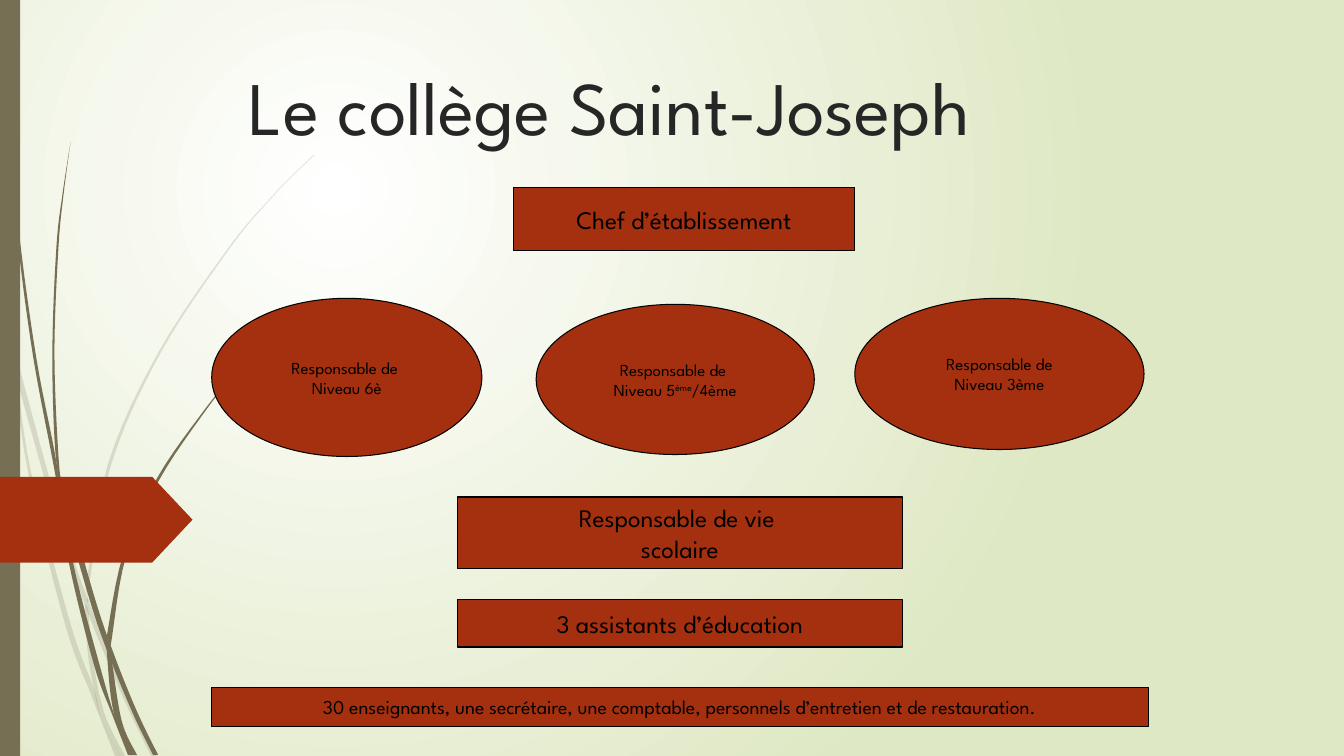
from lxml.etree import SubElement
from pptx import Presentation
from pptx.dml.color import RGBColor
from pptx.enum.shapes import MSO_SHAPE
from pptx.enum.text import MSO_ANCHOR, MSO_AUTO_SIZE, PP_ALIGN
from pptx.oxml.ns import qn
from pptx.util import Pt

FONT = "League Spartan"
WHITE = RGBColor(0xFF, 0xFF, 0xFF)
PALE_GREEN = RGBColor(0xDF, 0xE8, 0xC4)
OLIVE = RGBColor(0x76, 0x6F, 0x54)
RUST = RGBColor(0xA5, 0x30, 0x10)
CHARCOAL = RGBColor(0x26, 0x26, 0x26)
BLACK = RGBColor(0, 0, 0)

TITLE = "Le collège Saint-Joseph"
TITLE_BOX = (170.6, 24.5, 702, 86.4)
BAND_BOX = (0, 0, 14.4, 540)
ARROW_BOX = (0, 340.6, 137.5, 61.2)

RECT, OVAL = MSO_SHAPE.RECTANGLE, MSO_SHAPE.OVAL
ROLES = [
    (RECT, (366.5, 133.9, 244.1, 45.4), 18, ["Chef d’établissement"]),
    (RECT, (326.9, 355, 317.5, 51.1), 18, ["Responsable de vie ", "scolaire"]),
    (RECT, (326.9, 428.4, 317.5, 33.8), 18, ["3 assistants d’éducation"]),
    (OVAL, (151.2, 213.1, 193, 113), 12, ["Responsable de ", "Niveau 6è"]),
    (OVAL, (383, 217.4, 198.7, 107.3), 12, ["Responsable de ", "Niveau 5^ème^/4ème"]),
    (OVAL, (610.6, 213.1, 206.6, 108), 12, ["Responsable de", "Niveau 3ème"]),
    (RECT, (151.2, 491, 668.9, 28.1), 14,
     ["30 enseignants, une secrétaire, une comptable, personnels d’entretien et de restauration."]),
]

PALE_STEMS = [
    ([(0, 215.3), (7.2, 247.7), (20.2, 338.4), (46.8, 447.1), (66.2, 499), (82.1, 540)],
     [(0, 203), (6.5, 231.8), (12.2, 270.7), (22.3, 337.7), (50.4, 445.7), (67, 491.8),
      (72.7, 514.1), (85.7, 540)]),
    ([(10.1, 248.4), (12.2, 270.7), (41.8, 375.8), (63.4, 439.2), (88.6, 499.7), (108, 540)],
     [(10.1, 248.4), (44.6, 374.4), (66.2, 437), (91.4, 498.2), (111.6, 540)]),
    ([(224.6, 110.2), (208.1, 126), (193, 141.8), (164.2, 175.7), (113.8, 250.6),
      (77, 331.9), (61.2, 420.5)],
     [(224.6, 110.9), (208.8, 126), (193, 142.6), (164.9, 176.4), (115.2, 251.3),
      (79.2, 332.6), (63.4, 420.5), (63.4, 429.1)]),
    ([(60.5, 431.3), (62.6, 465.1), (67, 491.8), (72.7, 514.1), (85.7, 540)],
     [(60.5, 431.3), (63.4, 437.8), (65.5, 465.1), (74.2, 508.3), (89.3, 540)]),
]
DARK_STEMS = [
    ([(2.2, 0), (2.9, 34.6), (5, 79.2), (12.2, 167.8), (23.8, 255.6), (40.3, 343.4),
      (49, 401), (67, 474.5), (79.9, 509.8), (91.4, 539.3)],
     [(2.9, 0), (3.6, 34.6), (5.8, 78.5), (13.7, 167), (25.9, 255.6), (39.6, 326.2),
      (51.8, 400.3), (70.6, 473), (83.5, 516.2), (94.3, 539.3)]),
    ([(43.2, 339.8), (46.1, 363.6), (63.4, 426.2), (76.3, 464.4), (95, 509.8), (109.4, 539.3)],
     [(43.2, 339.8), (67, 424.8), (81.4, 467.3), (97.9, 508.3), (113, 539.3)]),
    ([(50.4, 101.5), (44.6, 139), (40.3, 176.4), (37.4, 251.3), (39.6, 323.3), (46.1, 363.6)],
     [(50.4, 101.5), (45.4, 139), (41.8, 176.4), (38.9, 251.3), (41.8, 326.2), (46.1, 363.6)]),
    ([(187.2, 247.7), (176.4, 257.8), (166.3, 268.6), (146.9, 291.6), (112.3, 341.3),
      (87.8, 396.7), (76.3, 454.3)],
     [(187.9, 247.7), (176.4, 258.5), (166.3, 269.3), (147.6, 292.3), (113.8, 342.7),
      (90, 397.4), (79.9, 455.8), (79.2, 461.5)]),
    ([(76.3, 454.3), (76.3, 464.4), (79.2, 497.5), (84.2, 519.8), (93.6, 539.3)],
     [(76.3, 454.3), (79.9, 472.3), (87.1, 515.5), (97.9, 539.3)]),
]


def spline(points, steps=6):
    padded = [points[0], *points, points[-1]]
    curve = []
    for before, start, end, after in zip(padded, padded[1:], padded[2:], padded[3:]):
        for step in range(steps):
            t = step / steps
            curve.append(tuple(
                (2 * b + (c - a) * t + (2 * a - 5 * b + 4 * c - d) * t ** 2
                 + (3 * b - a - 3 * c + d) * t ** 3) / 2
                for a, b, c, d in zip(before, start, end, after)))
    return curve + [points[-1]]


def place(shape, box):
    shape.left, shape.top, shape.width, shape.height = (Pt(v) for v in box)


def paint(shape, color):
    shape.shadow.inherit = False
    shape.fill.solid()
    shape.fill.fore_color.rgb = color
    shape.line.fill.background()


def add_stem(slide, edges, opacity):
    left_edge, right_edge = edges
    outline = [(Pt(x), Pt(y)) for x, y in spline(left_edge) + spline(right_edge)[::-1]]
    builder = slide.shapes.build_freeform(*outline[0])
    builder.add_line_segments(outline[1:], close=True)
    stem = builder.convert_to_shape()
    paint(stem, OLIVE)
    if opacity < 100:
        tint = stem.fill._xPr.find(qn("a:solidFill"))[0]
        SubElement(tint, qn("a:alpha")).set("val", str(opacity * 1000))


def add_block(slide, kind, box, color):
    block = slide.shapes.add_shape(kind, *(Pt(v) for v in box))
    paint(block, color)
    return block


def add_role(slide, kind, box, size, lines):
    role = add_block(slide, kind, box, RUST)
    role.line.color.rgb = BLACK
    role.line.width = Pt(0.75)
    frame = role.text_frame
    frame.word_wrap = False
    frame.vertical_anchor = MSO_ANCHOR.MIDDLE
    frame.text = "\n".join(line.split("^")[0] for line in lines)
    for paragraph, line in zip(frame.paragraphs, lines):
        paragraph.alignment = PP_ALIGN.CENTER
        for part in line.split("^")[1:]:
            paragraph.add_run().text = part
        for index, run in enumerate(paragraph.runs):
            run.font.name = FONT
            run.font.size = Pt(size)
            run.font.color.rgb = BLACK
            if index % 2:
                run._r.get_or_add_rPr().set("baseline", "30000")


def set_background(slide):
    fill = slide.background.fill
    fill.gradient()
    for stop, color in zip(fill.gradient_stops, (WHITE, PALE_GREEN)):
        stop.color.rgb = color
    gradient = slide.element.find(".//" + qn("a:gradFill"))
    gradient.remove(gradient.find(qn("a:lin")))
    circle = SubElement(gradient, qn("a:path"), path="circle")
    SubElement(circle, qn("a:fillToRect"), l="50000", t="50000", r="100000", b="100000")


def set_title(slide):
    title = slide.shapes.title
    place(title, TITLE_BOX)
    frame = title.text_frame
    frame.text = TITLE
    frame.word_wrap = True
    frame.auto_size = MSO_AUTO_SIZE.NONE
    frame.vertical_anchor = MSO_ANCHOR.BOTTOM
    paragraph = frame.paragraphs[0]
    paragraph.alignment = PP_ALIGN.LEFT
    font = paragraph.runs[0].font
    font.name = FONT
    font.size = Pt(54)
    font.color.rgb = CHARCOAL


def main():
    prs = Presentation()
    prs.slide_width, prs.slide_height = Pt(960), Pt(540)
    slide = prs.slides.add_slide(prs.slide_layouts[5])
    set_background(slide)
    set_title(slide)
    for stems, opacity in ((PALE_STEMS, 20), (DARK_STEMS, 100)):
        for edges in stems:
            add_stem(slide, edges, opacity)
    add_block(slide, RECT, BAND_BOX, OLIVE)
    arrow = add_block(slide, MSO_SHAPE.PENTAGON, ARROW_BOX, RUST)
    arrow.adjustments[0] = 0.47
    for role in ROLES:
        add_role(slide, *role)
    prs.save("out.pptx")


if __name__ == "__main__":
    main()
